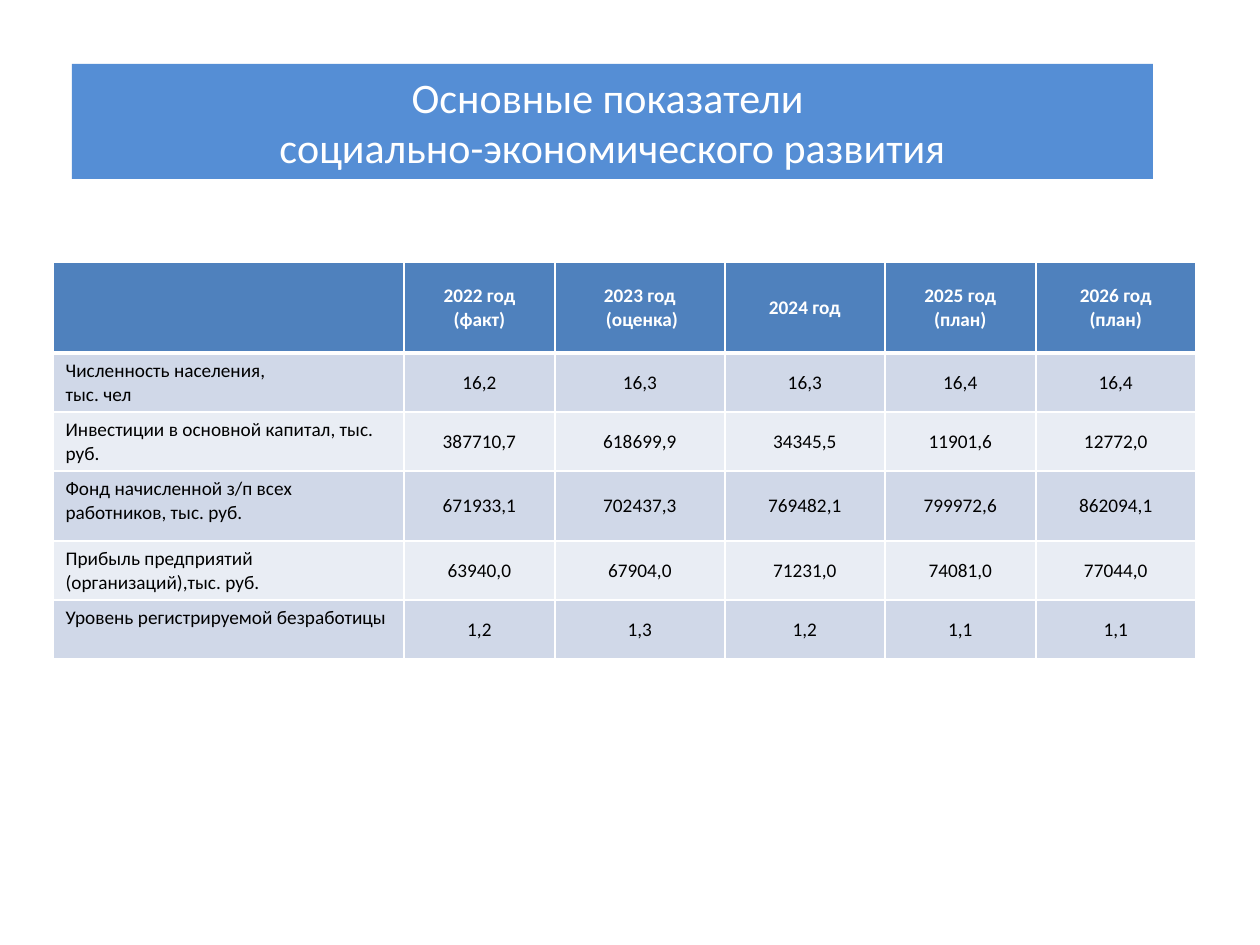
from lxml import etree
from pptx import Presentation
from pptx import util as u
from pptx.dml.color import RGBColor
from pptx.enum import shapes, text
from pptx.oxml.ns import qn

PX = 914400 / 126
WHITE, BLACK = "FFFFFF", "000000"
HEADER_FILL, BANDS = "4F81BD", ("D0D8E8", "E9EDF4")
COLUMNS = [351, 151, 170, 160, 151, 160]
ROWS = [91, 59, 59, 70, 59, 59]
INDICATORS = [
    ["", "2022 год\n(факт)", "2023 год\n (оценка)", "2024 год", "2025 год\n(план)", "2026 год\n(план)"],
    ["Численность населения,\nтыс. чел", "16,2", "16,3", "16,3", "16,4", "16,4"],
    ["Инвестиции в основной капитал, тыс. руб.", "387710,7", "618699,9", "34345,5", "11901,6", "12772,0"],
    ["Фонд начисленной з/п всех работников, тыс. руб.", "671933,1", "702437,3", "769482,1", "799972,6", "862094,1"],
    ["Прибыль предприятий (организаций),тыс. руб.", "63940,0", "67904,0", "71231,0", "74081,0", "77044,0"],
    ["Уровень регистрируемой безработицы", "1,2", "1,3", "1,2", "1,1", "1,1"],
]


def px(length):
    """Turn pixels into EMU."""
    return u.Emu(round(length * PX))


def color(value):
    """Turn a hex string into a colour."""
    return RGBColor.from_string(value)


def write(frame, words, size=11, ink=BLACK, bold=False, align=text.PP_ALIGN.CENTER, font="Calibri"):
    """Fill a text frame with formatted words."""
    frame.text = words
    for paragraph in frame.paragraphs:
        paragraph.alignment = align
        for run in paragraph.runs:
            run.font.name, run.font.size, run.font.bold = font, u.Pt(size), bold
            run.font.color.rgb = color(ink)


def border(cell, **widths):
    """Draw white cell borders with the given widths in points."""
    properties = cell._tc.get_or_add_tcPr()
    for position, (side, width) in enumerate(widths.items()):
        line = etree.Element(qn(f"a:ln{side}"), w=str(u.Pt(width)))
        fill = etree.SubElement(line, qn("a:solidFill"))
        etree.SubElement(fill, qn("a:srgbClr"), val=WHITE)
        properties.insert(position, line)


class Deck:
    """Holds the presentation and its current slide."""

    def __init__(self, width, height):
        """Start a deck with one blank slide."""
        self.deck = Presentation()
        self.deck.slide_width, self.deck.slide_height = px(width), px(height)
        self.slide = self.deck.slides.add_slide(self.deck.slide_layouts[6])

    def banner(self, words, left, top, width, height, fill):
        """Add the filled title banner."""
        title = self.slide.shapes.add_shape(
            shapes.MSO_SHAPE.RECTANGLE, px(left), px(top), px(width), px(height))
        title.shadow.inherit = False
        title.fill.solid()
        title.fill.fore_color.rgb = color(fill)
        title.line.fill.background()
        title.text_frame.word_wrap = True
        title.text_frame.auto_size = text.MSO_AUTO_SIZE.SHAPE_TO_FIT_TEXT
        write(title.text_frame, words, size=24, ink=WHITE)

    def table(self, rows, left, top, widths, heights):
        """Add the indicator table with a header row and banded body."""
        grid = self.slide.shapes.add_table(
            len(rows), len(widths), px(left), px(top), px(sum(widths)), px(sum(heights))).table
        for column, width in zip(grid.columns, widths):
            column.width = px(width)
        for r, (row, height) in enumerate(zip(rows, heights)):
            grid.rows[r].height = px(height)
            for c, words in enumerate(row):
                self.cell(grid.cell(r, c), words, header=r == 0, label=r > 0 and c == 0,
                          fill=BANDS[(r - 1) % 2] if r else HEADER_FILL,
                          above=3 if r == 1 else 1)

    def cell(self, cell, words, header, label, fill, above):
        """Style and fill one table cell."""
        cell.fill.solid()
        cell.fill.fore_color.rgb = color(fill)
        border(cell, L=1, R=1, T=above, B=3 if header else 1)
        cell.vertical_anchor = text.MSO_ANCHOR.TOP if label else text.MSO_ANCHOR.MIDDLE
        write(cell.text_frame, words, ink=WHITE if header else BLACK, bold=header,
              align=text.PP_ALIGN.LEFT if label else text.PP_ALIGN.CENTER)


def main():
    """Build and save the slide."""
    deck = Deck(1260, 945)
    deck.banner("Основные показатели \vсоциально-экономического развития", 72, 64, 1081, 115, "558ED5")
    deck.table(INDICATORS, 53, 262, COLUMNS, ROWS)
    deck.deck.save("out.pptx")


if __name__ == "__main__":
    main()
